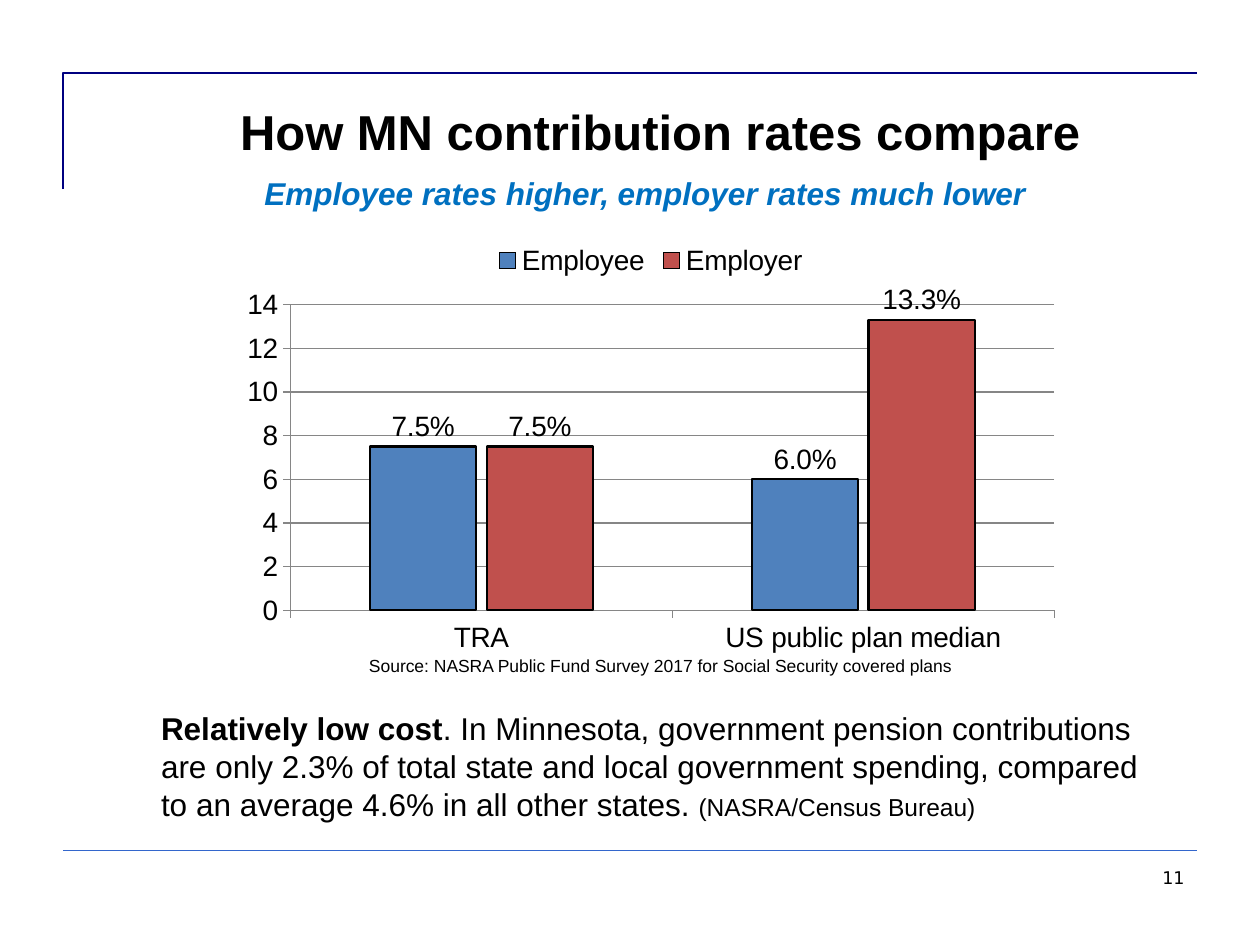
from lxml import etree
from pptx import Presentation
from pptx.chart.data import CategoryChartData
from pptx.dml.color import RGBColor
from pptx.enum import chart as ch, shapes, text
from pptx.oxml.ns import qn
from pptx.util import Inches, Pt

BLACK = "000000"
NAVY = "000080"
GRID = "868686"


def rgb(value):
    return RGBColor.from_string(value)


def set_line(line, color, width):
    line.color.rgb = rgb(color)
    line.width = Pt(width)


def set_font(font, size, color=BLACK, name="Arial", bold=False, italic=False):
    font.name = name
    font.size = Pt(size)
    font.color.rgb = rgb(color)
    font.bold = bold
    font.italic = italic


def add_text(slide, box, runs, align=text.PP_ALIGN.LEFT, wrap=True):
    """Add a one-paragraph text box; each run is (wording, font settings)."""
    tf = slide.shapes.add_textbox(*map(Inches, box)).text_frame
    tf.word_wrap = wrap
    p = tf.paragraphs[0]
    p.alignment = align
    for wording, style in runs:
        r = p.add_run()
        r.text = wording
        set_font(r.font, **style)
    return p


def add_corner_rule(slide):
    left, top, right, bottom = map(Inches, (0.5, 0.58, 9.5, 1.5))
    builder = slide.shapes.build_freeform(left, bottom)
    builder.add_line_segments([(left, top), (right, top)], close=False)
    sp = builder.convert_to_shape()
    sp.shadow.inherit = False
    sp.fill.background()
    set_line(sp.line, NAVY, 1.5)


def add_footer_rule(slide):
    y = Inches(6.75)
    line = slide.shapes.add_connector(
        shapes.MSO_CONNECTOR.STRAIGHT, Inches(0.5), y, Inches(9.5), y)
    set_line(line.line, "3366CC", 0.25)
    etree.SubElement(line._element.spPr, qn("a:effectLst"))


def add_rates_chart(slide):
    data = CategoryChartData(number_format="0.0")
    data.categories = ["TRA", "US public plan median"]
    data.add_series("Employee", (7.5, 6.0))
    data.add_series("Employer", (7.5, 13.3))
    box = map(Inches, (1.83, 1.83, 6.67, 3.42))
    chart = slide.shapes.add_chart(
        ch.XL_CHART_TYPE.COLUMN_CLUSTERED, *box, data).chart
    set_font(chart.font, 16)
    chart.has_title = False
    chart.has_legend = True
    chart.legend.position = ch.XL_LEGEND_POSITION.TOP
    chart.legend.include_in_layout = False

    plot = chart.plots[0]
    plot.gap_width = 150
    plot.overlap = -10
    plot.vary_by_categories = False
    for series, color in zip(plot.series, ("4F81BD", "C0504D")):
        series.format.fill.solid()
        series.format.fill.fore_color.rgb = rgb(color)
        set_line(series.format.line, BLACK, 1.25)
        labels = series.data_labels
        labels.show_value = True
        labels.number_format = '0.0"%"'
        labels.number_format_is_linked = False
        labels.position = ch.XL_LABEL_POSITION.OUTSIDE_END

    values = chart.value_axis
    values.minimum_scale, values.maximum_scale, values.major_unit = 0, 14, 2
    values.tick_labels.number_format = "0"
    values.tick_labels.number_format_is_linked = False
    values.has_major_gridlines = True
    set_line(values.major_gridlines.format.line, GRID, 0.75)
    for axis in (values, chart.category_axis):
        axis.major_tick_mark = ch.XL_TICK_MARK.OUTSIDE
        set_line(axis.format.line, GRID, 0.75)


def main():
    prs = Presentation()
    prs.slide_width, prs.slide_height = Inches(10), Inches(7.5)
    slide = prs.slides.add_slide(prs.slide_layouts[6])

    add_corner_rule(slide)
    add_footer_rule(slide)
    add_rates_chart(slide)
    add_text(slide, (1.76, 0.76, 6.96, 0.57),
             [("How MN contribution rates compare", dict(size=28, bold=True))],
             text.PP_ALIGN.CENTER, wrap=False)
    add_text(slide, (2.83, 5.15, 5.08, 0.27),
             [("Source: NASRA Public Fund Survey 2017 for Social Security "
               "covered plans", dict(size=10))])
    add_text(slide, (1.18, 5.58, 8.06, 1.01), [
        ("Relatively low cost", dict(size=18, bold=True)),
        (". In Minnesota, government pension contributions are only 2.3% of "
         "total state and local government spending, compared to an average "
         "4.6% in all other states. ", dict(size=18)),
        ("(NASRA/Census Bureau)", dict(size=14)),
    ])
    add_text(slide, (7.17, 6.83, 2.33, 0.5),
             [("11", dict(size=10, name="DejaVu Sans"))],
             text.PP_ALIGN.RIGHT)
    subtitle = add_text(
        slide, (2, 1.33, 6.42, 0.4),
        [("Employee rates higher, employer rates much lower",
          dict(size=18, color="0070C0", bold=True, italic=True))])
    subtitle.space_after = Pt(12)

    prs.save("out.pptx")


if __name__ == "__main__":
    main()
